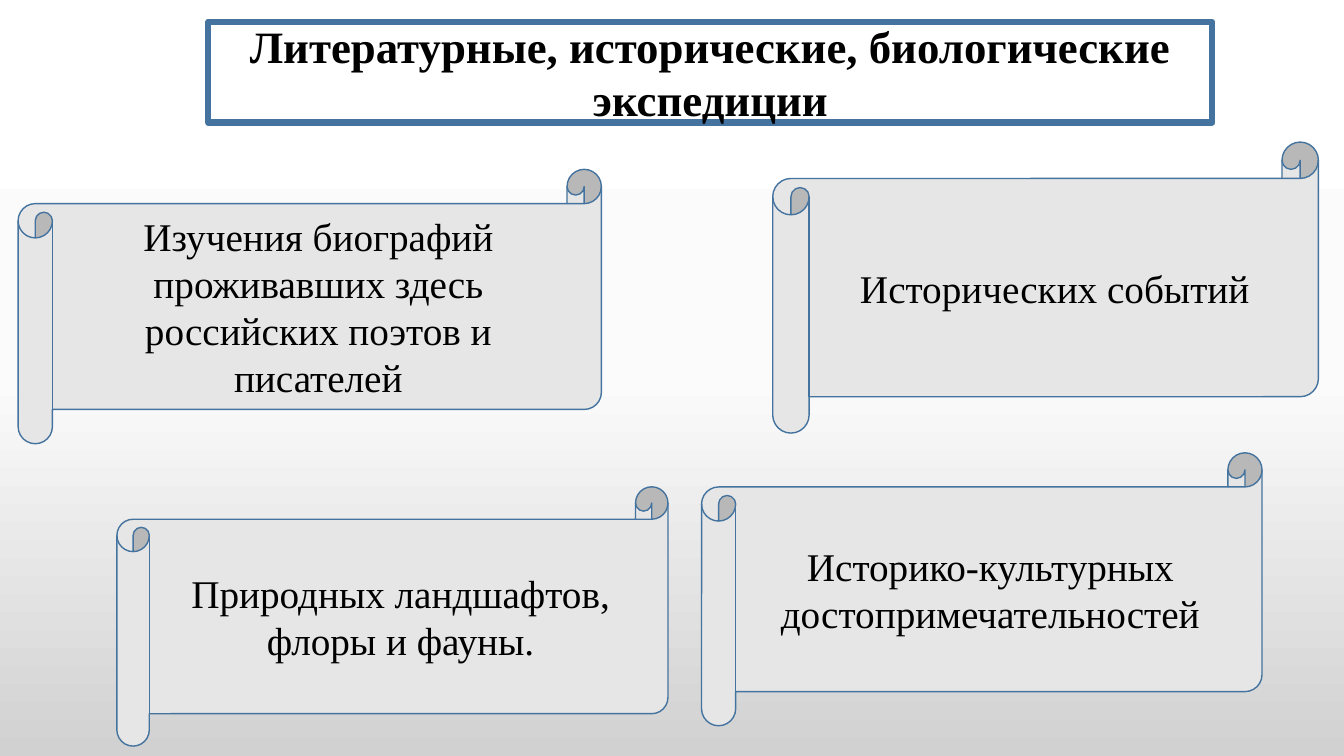
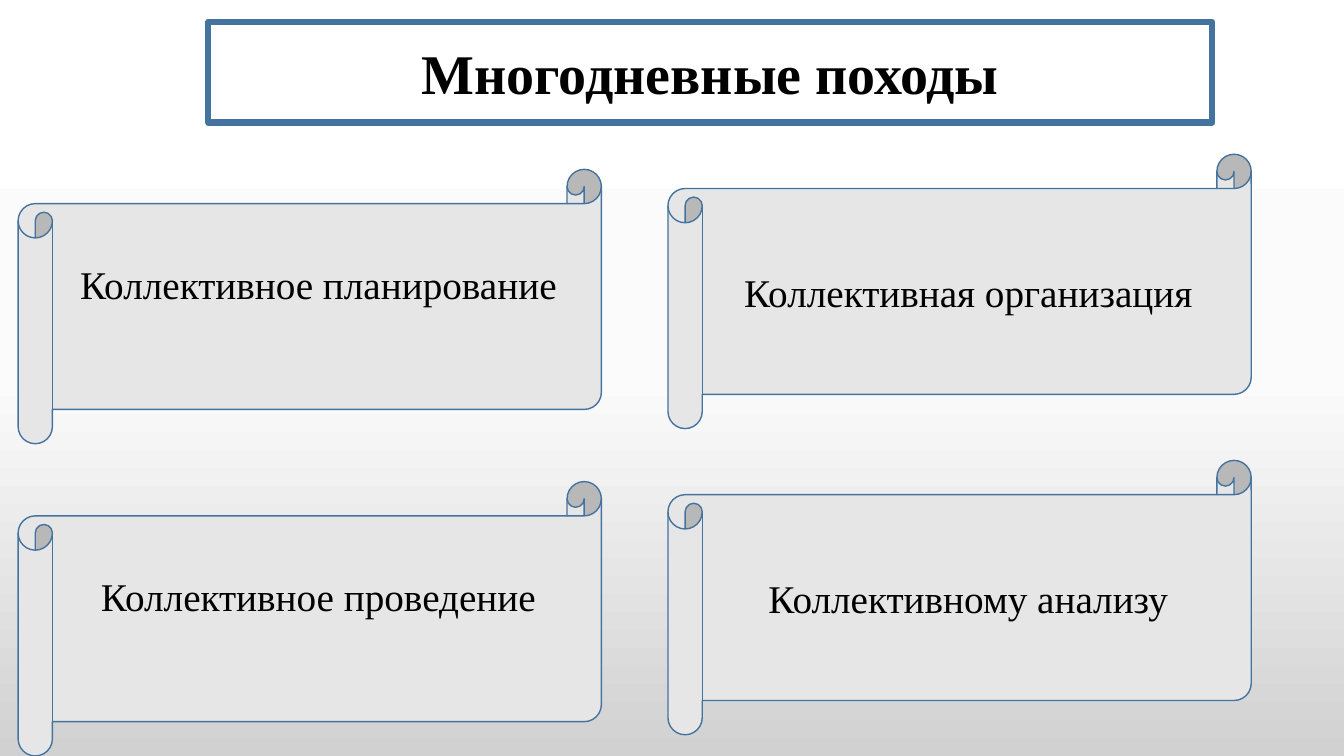
from copy import deepcopy

from lxml.etree import SubElement
from pptx import Presentation
from pptx.dml.color import RGBColor
from pptx.enum.shapes import MSO_SHAPE
from pptx.enum.text import MSO_ANCHOR, MSO_AUTO_SIZE, PP_ALIGN
from pptx.oxml.ns import qn
from pptx.util import Inches, Pt

WHITE = RGBColor(0xFF, 0xFF, 0xFF)
PALE = RGBColor(0xFB, 0xFB, 0xFB)
SILVER = RGBColor(0xD1, 0xD1, 0xD1)
PAPER = RGBColor(0xE7, 0xE6, 0xE6)
BLUE = RGBColor(0x43, 0x73, 0x9E)
BLACK = RGBColor(0, 0, 0)

FONT = "Times New Roman"
WIDTH, HEIGHT = Inches(13.33), Inches(7.5)

TITLE_BOX = (15.5, 2.9, 74.7, 13.3)
SCROLL_SIZE = (43.4, 36.3)
LEFT, RIGHT = 1.35, 49.7
RAISED = Inches(0.5)
LEVEL = Inches(0.05)

EXPEDITIONS = [
    ("Изучения биографий проживавших здесь российских поэтов и писателей",
     (LEFT, 22.4, *SCROLL_SIZE), LEVEL),
    ("Исторических событий", (57.5, 18.8, 40.6, 38.5), LEVEL),
    ("Природных ландшафтов, флоры и фауны.", (8.7, 64.4, 41, 34.3), LEVEL),
    ("Историко-культурных достопримечательностей", (52.2, 59.9, 41.7, 36.1), LEVEL),
]
HIKES = [
    ("Коллективное планирование", (LEFT, 22.4, *SCROLL_SIZE), RAISED),
    ("Коллективная организация", (RIGHT, 20.4, *SCROLL_SIZE), LEVEL),
    ("Коллективное проведение", (LEFT, 63.7, *SCROLL_SIZE), RAISED),
    ("Коллективному анализу", (RIGHT, 60.9, *SCROLL_SIZE), LEVEL),
]


def set_all(target, values):
    for name, value in values.items():
        setattr(target, name, value)


def to_lengths(box):
    return [int(share * side / 100) for share, side in zip(box, (WIDTH, HEIGHT) * 2)]


def paint(sp, fill, line_width):
    sp.fill.solid()
    sp.fill.fore_color.rgb = fill
    sp.line.color.rgb = BLUE
    sp.line.width = Pt(line_width)


def write(sp, text, size, bold=False, bottom=LEVEL):
    tf = sp.text_frame
    set_all(tf, {"word_wrap": True, "auto_size": MSO_AUTO_SIZE.NONE,
                 "vertical_anchor": MSO_ANCHOR.MIDDLE, "margin_bottom": bottom})
    p = tf.paragraphs[0]
    p.alignment = PP_ALIGN.CENTER
    r = p.add_run()
    r.text = text
    set_all(r.font, {"name": FONT, "size": Pt(size), "bold": bold})
    r.font.color.rgb = BLACK


def set_background(master):
    fill = master.background.fill
    fill.gradient()
    fill.gradient_angle = 270
    stops = master.element.find(".//" + qn("a:gsLst"))
    stops.append(deepcopy(stops[-1]))
    for stop, position, color in zip(fill.gradient_stops, (0, 0.5, 1), (WHITE, PALE, SILVER)):
        stop.position = position
        stop.color.rgb = color


def add_title(s, text, size):
    sp = s.shapes.title
    set_all(sp, dict(zip(("left", "top", "width", "height"), to_lengths(TITLE_BOX))))
    geometry = SubElement(sp.element.spPr, qn("a:prstGeom"), prst="roundRect")
    SubElement(geometry, qn("a:avLst"))
    paint(sp, WHITE, 4.5)
    write(sp, text, size, bold=True)


def add_scroll(s, text, box, bottom):
    sp = s.shapes.add_shape(MSO_SHAPE.HORIZONTAL_SCROLL, *to_lengths(box))
    sp.shadow.inherit = False
    paint(sp, PAPER, 1)
    write(sp, text, 28, bottom=bottom)


def add_scroll_slide(prs, title, title_size, scrolls):
    s = prs.slides.add_slide(prs.slide_layouts.get_by_name("Title Only"))
    add_title(s, title, title_size)
    for text, box, bottom in scrolls:
        add_scroll(s, text, box, bottom)


def main():
    prs = Presentation()
    set_all(prs, {"slide_width": WIDTH, "slide_height": HEIGHT})
    set_background(prs.slide_master)
    add_scroll_slide(prs, "Литературные, исторические, биологические экспедиции", 32, EXPEDITIONS)
    add_scroll_slide(prs, "Многодневные походы", 40, HIKES)
    prs.save("out.pptx")


if __name__ == "__main__":
    main()
